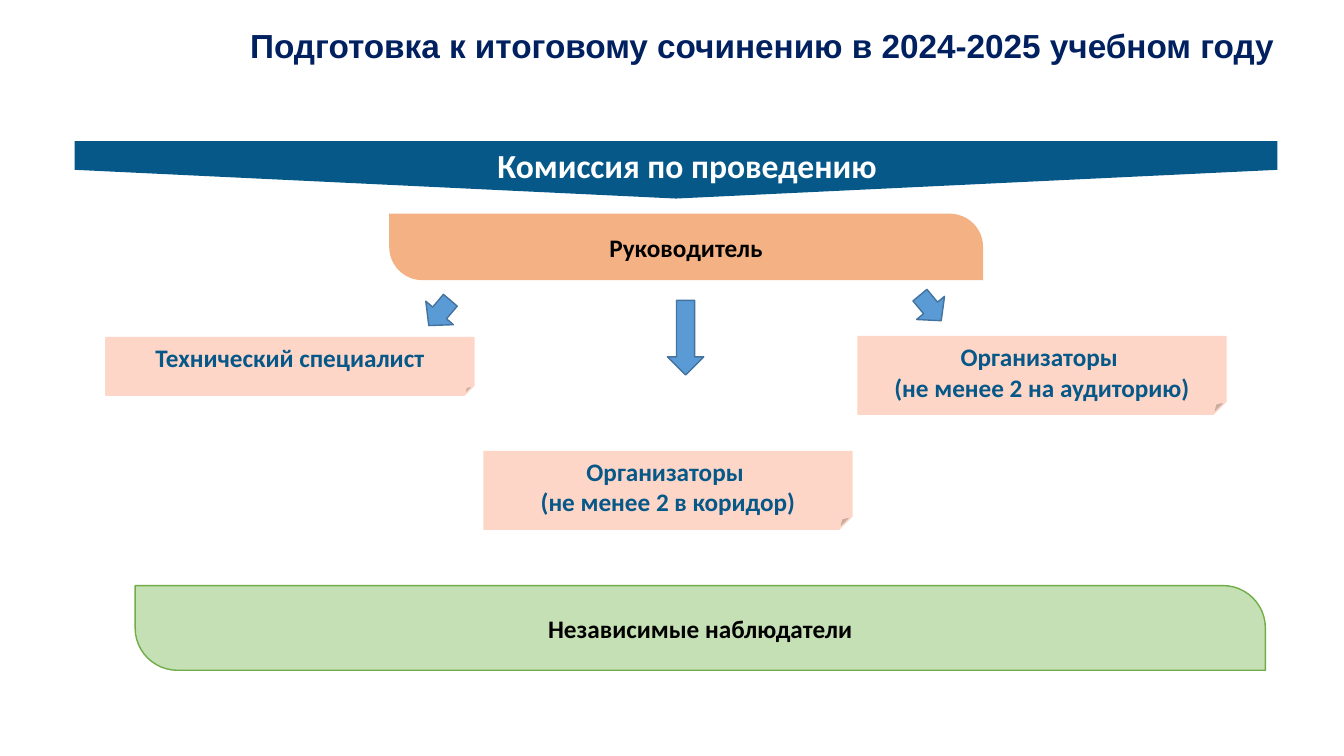
from pptx import Presentation
from pptx.dml.color import RGBColor
from pptx.enum.shapes import MSO_SHAPE
from pptx.enum.text import MSO_ANCHOR, PP_ALIGN
from pptx.util import Inches, Pt

NAVY, BLUE, PINK = "002060", "065889", "FDD6C7"


def paint(shape, fill, line=None):
    shape.shadow.inherit = False
    shape.fill.solid()
    shape.fill.fore_color.rgb = RGBColor.from_string(fill)
    if line:
        shape.line.color.rgb = RGBColor.from_string(line)
        shape.line.width = Pt(1)
    else:
        shape.line.fill.background()


def write(shape, lines, size, color, font="Calibri", anchor=MSO_ANCHOR.TOP):
    frame = shape.text_frame
    frame.word_wrap = True
    frame.vertical_anchor = anchor
    for index, line in enumerate(lines):
        para = frame.add_paragraph() if index else frame.paragraphs[0]
        para.alignment = PP_ALIGN.CENTER
        span = para.add_run()
        span.text = line
        span.font.name = font
        span.font.size = Pt(size)
        span.font.bold = True
        span.font.color.rgb = RGBColor.from_string(color)


deck = Presentation()
deck.slide_width, deck.slide_height = Inches(13.33), Inches(7.5)
page = deck.slides.add_slide(deck.slide_layouts[6])

# Banner pointing down, with its caption
banner = page.shapes.add_shape(
    MSO_SHAPE.PENTAGON, Inches(6.42), Inches(-4.28), Inches(0.57), Inches(11.93))
banner.rotation = 90
paint(banner, BLUE)
caption = page.shapes.add_textbox(Inches(3.87), Inches(1.39), Inches(5.89), Inches(0.5))
write(caption, ["Комиссия по проведению"], 24, "FFFFFF")

# Bars with two rounded corners: head of the commission and observers
bars = [
    ("Руководитель", 3.86, 2.12, 5.89, 0.66, "F4B183", None),
    ("Независимые наблюдатели", 1.34, 5.81, 11.21, 0.84, "C5E0B4", "70AD47"),
]
for label, left, top, width, height, fill, line in bars:
    bar = page.shapes.add_shape(
        MSO_SHAPE.ROUND_2_DIAG_RECTANGLE,
        Inches(left), Inches(top), Inches(width), Inches(height))
    bar.adjustments[0], bar.adjustments[1] = 0, 0.5
    paint(bar, fill, line)
    write(bar, [label], 18, "000000", anchor=MSO_ANCHOR.MIDDLE)

# Role cards
cards = [
    (["Технический специалист"], 1.05, 3.35, 0.57),
    (["Организаторы ", "(не менее 2 на аудиторию)"], 8.51, 3.34, 0.77),
    (["Организаторы ", "(не менее 2 в коридор)"], 4.8, 4.48, 0.77),
]
for lines, left, top, height in cards:
    card = page.shapes.add_shape(
        MSO_SHAPE.FOLDED_CORNER, Inches(left), Inches(top), Inches(3.65), Inches(height))
    paint(card, PINK, PINK)
    write(card, lines, 18, BLUE)

# Arrows from the head to each role
for left, top, height, angle in [
    (4.18, 2.94, 0.33, 40.4), (9.05, 2.89, 0.33, 320.3), (6.62, 2.98, 0.74, 0),
]:
    arrow = page.shapes.add_shape(
        MSO_SHAPE.DOWN_ARROW, Inches(left), Inches(top), Inches(0.36), Inches(height))
    arrow.rotation = angle
    paint(arrow, "5B9BD5", "43739E")

# Title
title = page.shapes.add_textbox(Inches(2.11), Inches(0.28), Inches(10.89), Inches(0.65))
write(title, ["Подготовка к итоговому сочинению в 2024-2025 учебном году"], 23.8, NAVY, "Arial")
title.text_frame.paragraphs[0].line_spacing = 0.8

deck.save("out.pptx")
